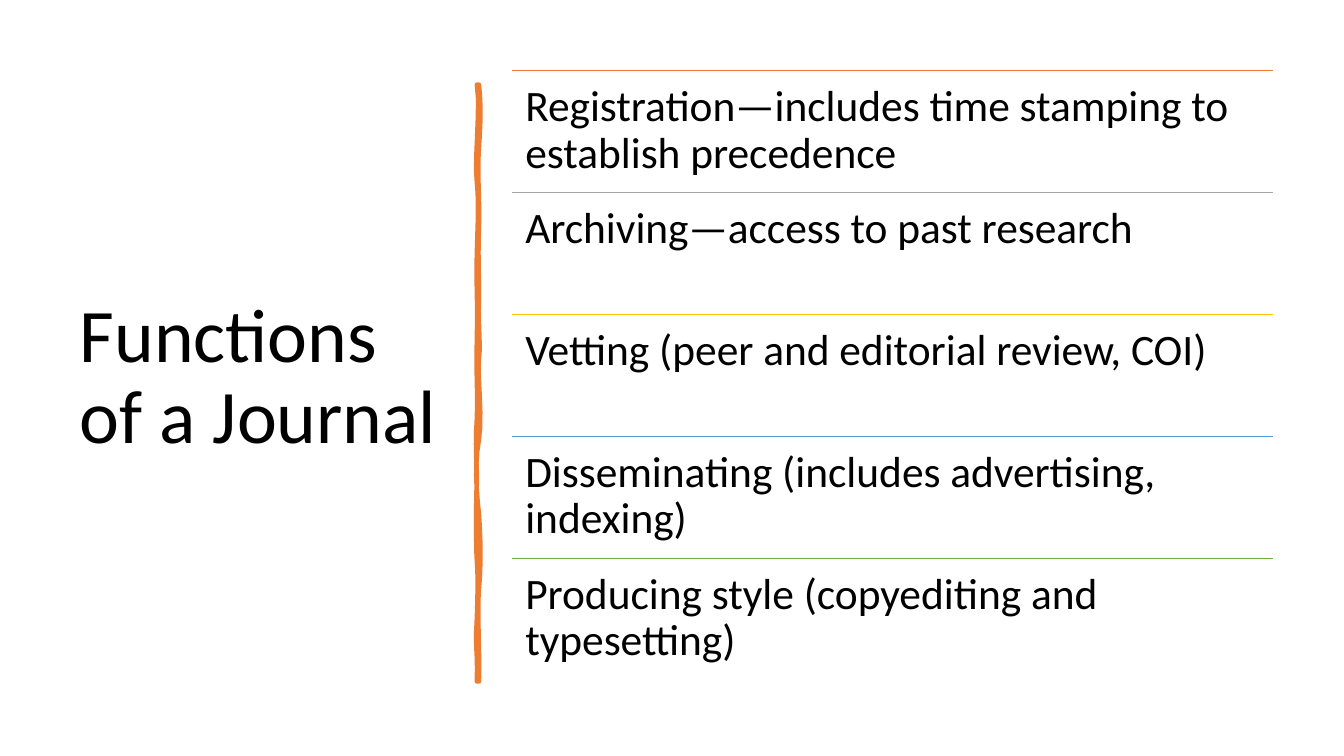
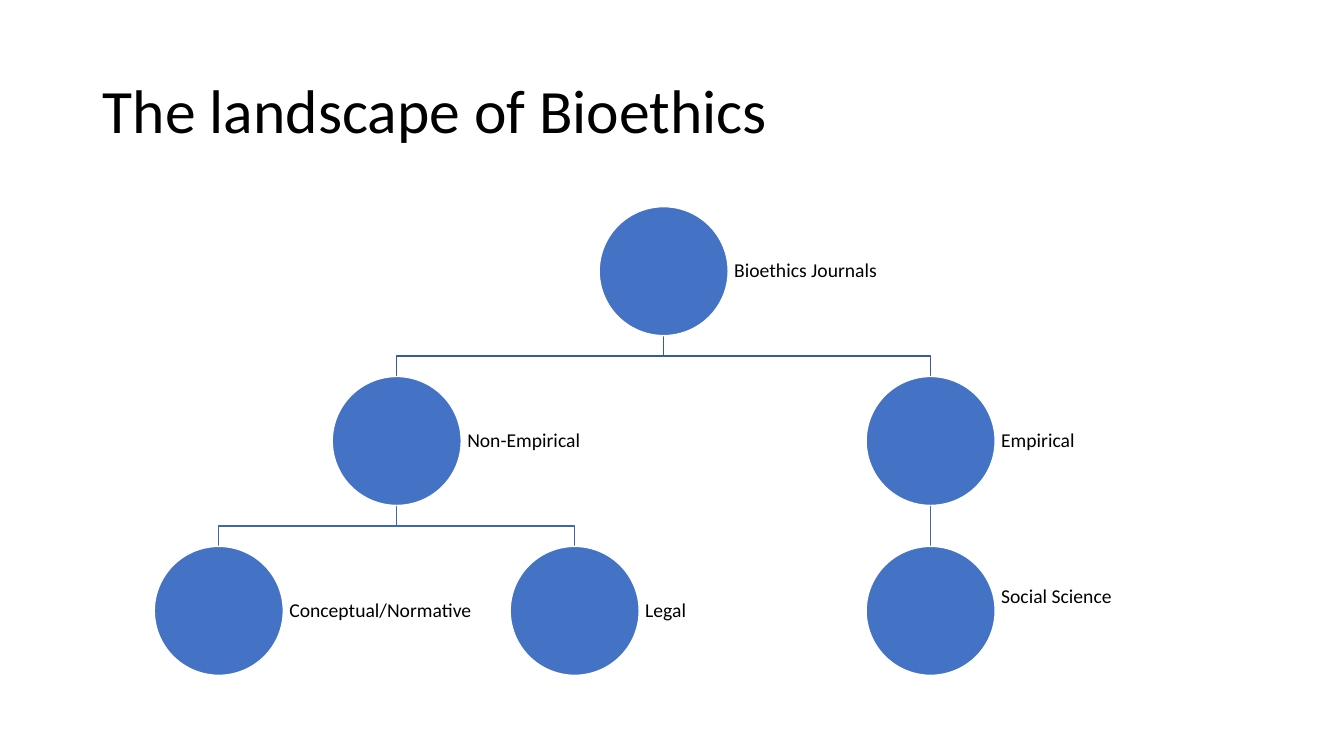
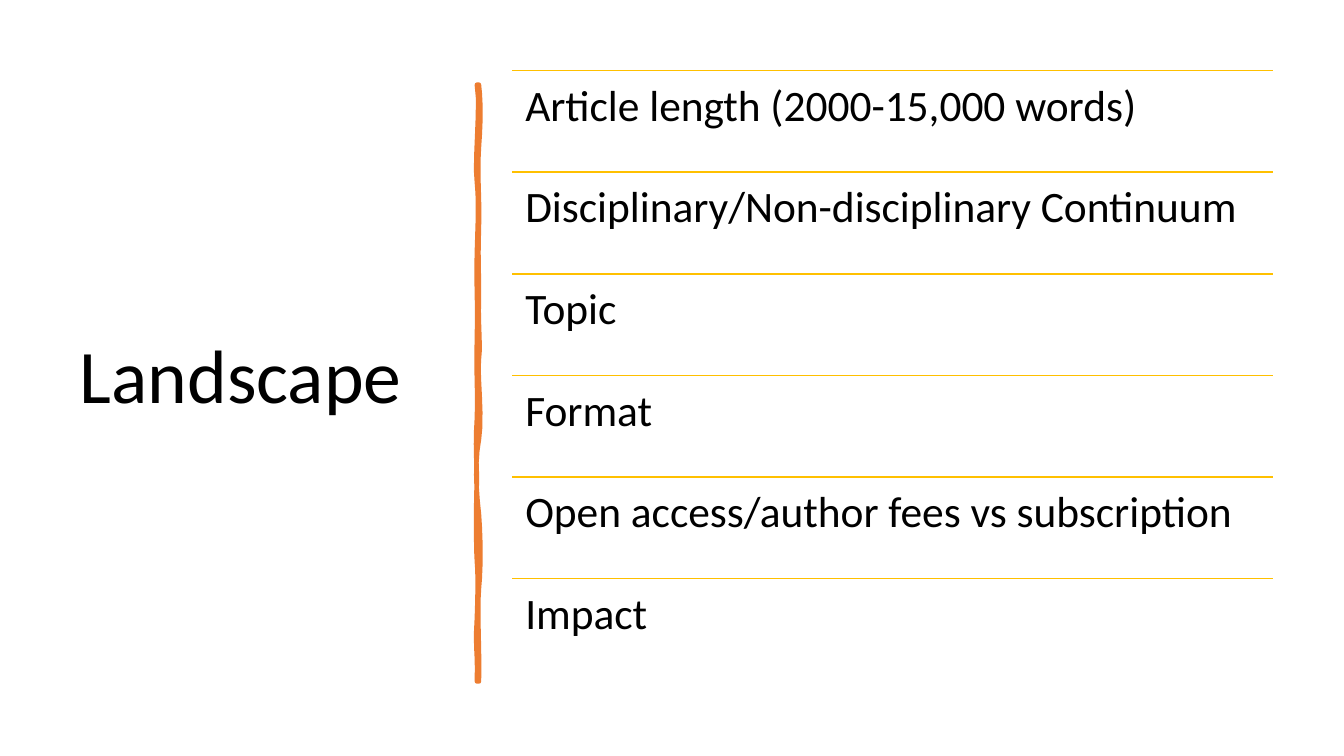
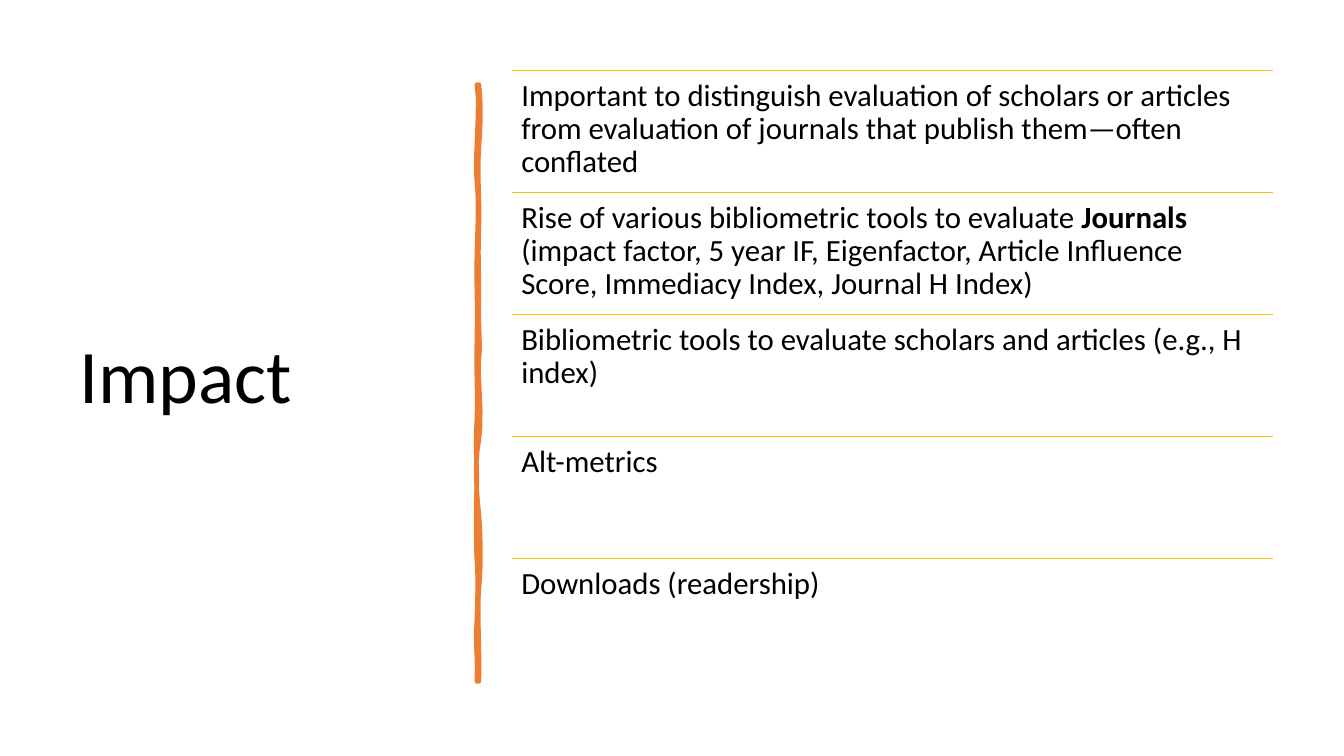
import pptx
import pptx.dml.color
import pptx.enum.shapes
import pptx.enum.text
import pptx.oxml
import pptx.util

Inches = pptx.util.Inches
ANCHOR = pptx.enum.text.MSO_ANCHOR
STRAIGHT = pptx.enum.shapes.MSO_CONNECTOR.STRAIGHT
OVAL = pptx.enum.shapes.MSO_SHAPE.OVAL

FONT = "Calibri"
BLACK, WHITE = "000000", "FFFFFF"
ORANGE, GREY, GOLD, SKY, GREEN = "ED7D31", "A5A5A5", "FFC000", "5B9BD5", "70AD47"
CIRCLE_BLUE = "4472C4"
LINK_BLUES = ["365B9D", "3E67B2"]  # by depth of the parent

# Text between ** marks is bold.
FUNCTIONS = {
    "title": "Functions of a Journal",
    "size": 31, "inset": 0.13,
    "rules": [ORANGE, GREY, GOLD, SKY, GREEN],
    "items": [
        "Registration—includes time stamping to establish precedence",
        "Archiving—access to past research",
        "Vetting (peer and editorial review, COI)",
        "Disseminating (includes advertising, indexing)",
        "Producing style (copyediting and typesetting)",
    ],
}
LANDSCAPE = {
    "title": "Landscape",
    "size": 31, "inset": 0.13,
    "rules": [GOLD] * 6,
    "items": [
        "Article length (2000-15,000 words)",
        "Disciplinary/Non-disciplinary Continuum",
        "Topic",
        "Format",
        "Open access/author fees vs subscription",
        "Impact",
    ],
}
IMPACT = {
    "title": "Impact",
    "size": 22, "inset": 0.09,
    "rules": [GOLD] * 5,
    "items": [
        "Important to distinguish evaluation of scholars or articles from "
        "evaluation of journals that publish them—often conflated",
        "Rise of various bibliometric tools to evaluate **Journals** (impact factor, "
        "5 year IF, Eigenfactor, Article Influence Score, Immediacy Index, "
        "Journal H Index)",
        "Bibliometric tools to evaluate scholars and articles (e.g., H index)",
        "Alt-metrics",
        "Downloads (readership)",
    ],
}
TREE_TITLE = "The landscape of Bioethics"
# Each node: label, children
TREE = ("Bioethics Journals", [
    ("Non-Empirical", [("Conceptual/Normative", []), ("Legal", [])]),
    ("Empirical", [("Social Science", [])]),
])
LABEL_LIFT = {"Social Science": 0.14}

SIDE_TITLE = (0.69, 0.7, 3.74, 6.11)
TOP_TITLE = (0.92, 0.4, 11.5, 1.45)
LIST_LEFT, LIST_TOP, LIST_WIDTH, LIST_HEIGHT = 5.08, 0.7, 7.55, 6.05
DIAMETER, LABEL_WIDTH = 1.28, 1.93
FIRST_LEAF_X, LEAF_STEP = 2.17, 3.53
TREE_TOP, LEVEL_STEP = 2.05, 1.685

# Brush stroke outline: start point, then Bezier curves (control, control, end)
STROKE_START = (4.75, 0.84)
STROKE_CURVES = [
    ((4.77, 1.02), (4.77, 1.19), (4.75, 1.46)),
    ((4.73, 1.73), (4.76, 1.95), (4.75, 2.26)),
    ((4.74, 2.57), (4.75, 2.62), (4.75, 2.94)),
    ((4.74, 3.25), (4.77, 3.42), (4.75, 3.56)),
    ((4.73, 3.7), (4.79, 4.14), (4.75, 4.36)),
    ((4.71, 4.57), (4.72, 4.84), (4.75, 5.1)),
    ((4.77, 5.36), (4.77, 5.64), (4.75, 5.84)),
    ((4.73, 6.03), (4.76, 6.5), (4.75, 6.76)),
    ((4.74, 6.76), (4.73, 6.76), (4.73, 6.76)),
    ((4.74, 6.46), (4.71, 6.44), (4.73, 6.13)),
    ((4.74, 5.83), (4.74, 5.7), (4.73, 5.57)),
    ((4.72, 5.44), (4.72, 4.95), (4.73, 4.77)),
    ((4.73, 4.59), (4.71, 4.45), (4.73, 4.15)),
    ((4.74, 3.86), (4.72, 3.73), (4.73, 3.35)),
    ((4.74, 2.98), (4.72, 2.81), (4.73, 2.5)),
    ((4.74, 2.18), (4.75, 2), (4.73, 1.81)),
    ((4.7, 1.63), (4.77, 1.04), (4.73, 0.84)),
]
CURVE_STEPS = 6


def color(hex_code):
    return pptx.dml.color.RGBColor.from_string(hex_code)


def set_line(shape, hex_code, width=1):
    shape.line.color.rgb = color(hex_code)
    shape.line.width = pptx.util.Pt(width)


def write(frame, text, size, anchor):
    """Fill a text frame with one left-aligned paragraph; ** marks toggle bold."""
    frame.word_wrap = True
    frame.auto_size = pptx.enum.text.MSO_AUTO_SIZE.NONE
    frame.vertical_anchor = anchor
    paragraph = frame.paragraphs[0]
    paragraph.alignment = pptx.enum.text.PP_ALIGN.LEFT
    paragraph.line_spacing = 0.9
    for index, part in enumerate(text.split("**")):
        run = paragraph.add_run()
        run.text = part
        run.font.name = FONT
        run.font.size = pptx.util.Pt(size)
        run.font.color.rgb = color(BLACK)
        if index % 2:
            run.font.bold = True


def add_text(slide, box, text, size, inset, anchor=ANCHOR.TOP):
    frame = slide.shapes.add_textbox(*map(Inches, box)).text_frame
    frame.margin_left = frame.margin_right = Inches(inset)
    frame.margin_top = frame.margin_bottom = Inches(inset)
    write(frame, text, size, anchor)


def add_titled_slide(deck, title, box, size):
    slide = deck.slides.add_slide(deck.slide_layouts.get_by_name("Title Only"))
    heading = slide.shapes.title
    heading.left, heading.top, heading.width, heading.height = map(Inches, box)
    write(heading.text_frame, title, size, ANCHOR.MIDDLE)
    return slide


def add_line(slide, start, end, hex_code):
    line = slide.shapes.add_connector(STRAIGHT, *map(Inches, start + end))
    set_line(line, hex_code)
    line._element.spPr.append(pptx.oxml.parse_xml(
        '<a:effectLst xmlns:a="http://schemas.openxmlformats.org/drawingml/2006/main"/>'))


def add_outline(slide, points, close):
    start, *rest = [(Inches(x), Inches(y)) for x, y in points]
    builder = slide.shapes.build_freeform(*start)
    builder.add_line_segments(rest, close=close)
    outline = builder.convert_to_shape()
    outline.shadow.inherit = False
    return outline


def stroke_points():
    points = [STROKE_START]
    for first, second, end in STROKE_CURVES:
        start = points[-1]
        for step in range(1, CURVE_STEPS + 1):
            t = step / CURVE_STEPS
            u = 1 - t
            points.append(tuple(
                u**3 * a + 3 * u * u * t * b + 3 * u * t * t * c + t**3 * d
                for a, b, c, d in zip(start, first, second, end)))
    return points


def add_list_slide(deck, content):
    slide = add_titled_slide(deck, content["title"], SIDE_TITLE, 54)
    stroke = add_outline(slide, stroke_points(), close=True)
    stroke.fill.solid()
    stroke.fill.fore_color.rgb = color(ORANGE)
    set_line(stroke, ORANGE, 3.25)

    row_height = LIST_HEIGHT / len(content["items"])
    for row, (item, rule) in enumerate(zip(content["items"], content["rules"])):
        top = LIST_TOP + row * row_height
        add_line(slide, (LIST_LEFT, top), (LIST_LEFT + LIST_WIDTH, top), rule)
        add_text(slide, (LIST_LEFT, top, LIST_WIDTH, row_height),
                 item, content["size"], content["inset"])


def arrange(node, nodes, links, depth=0, leaves=0):
    """Centre each parent over its children; return its x and the leaves so far."""
    label, children = node
    child_xs = []
    for child in children:
        x, leaves = arrange(child, nodes, links, depth + 1, leaves)
        child_xs.append(x)
    if children:
        center = (child_xs[0] + child_xs[-1]) / 2
    else:
        center = FIRST_LEAF_X + leaves * LEAF_STEP
        leaves += 1
    top = TREE_TOP + depth * LEVEL_STEP
    nodes.append((label, center, top))
    links.extend((center, x, top + DIAMETER, depth) for x in child_xs)
    return center, leaves


def add_link(slide, parent_x, child_x, top, depth):
    bottom = top + LEVEL_STEP - DIAMETER
    middle = (top + bottom) / 2
    if parent_x == child_x:
        add_line(slide, (parent_x, top), (child_x, bottom), LINK_BLUES[depth])
        return
    elbow = add_outline(slide, [(parent_x, top), (parent_x, middle),
                                (child_x, middle), (child_x, bottom)], close=False)
    elbow.fill.background()
    set_line(elbow, LINK_BLUES[depth])


def add_node(slide, label, center, top):
    left = center - DIAMETER / 2
    circle = slide.shapes.add_shape(
        OVAL, *map(Inches, (left, top, DIAMETER, DIAMETER)))
    circle.shadow.inherit = False
    circle.fill.solid()
    circle.fill.fore_color.rgb = color(CIRCLE_BLUE)
    set_line(circle, WHITE)
    label_top = top - LABEL_LIFT.get(label, 0)
    add_text(slide, (left + DIAMETER, label_top, LABEL_WIDTH, DIAMETER),
             label, 14, 0.06, ANCHOR.MIDDLE)


def add_tree_slide(deck):
    slide = add_titled_slide(deck, TREE_TITLE, TOP_TITLE, 44)
    nodes, links = [], []
    arrange(TREE, nodes, links)
    for link in links:
        add_link(slide, *link)
    for node in nodes:
        add_node(slide, *node)


def main():
    deck = pptx.Presentation()
    deck.slide_width, deck.slide_height = Inches(13.33), Inches(7.5)
    add_list_slide(deck, FUNCTIONS)
    add_tree_slide(deck)
    add_list_slide(deck, LANDSCAPE)
    add_list_slide(deck, IMPACT)
    deck.save("out.pptx")


if __name__ == "__main__":
    main()
